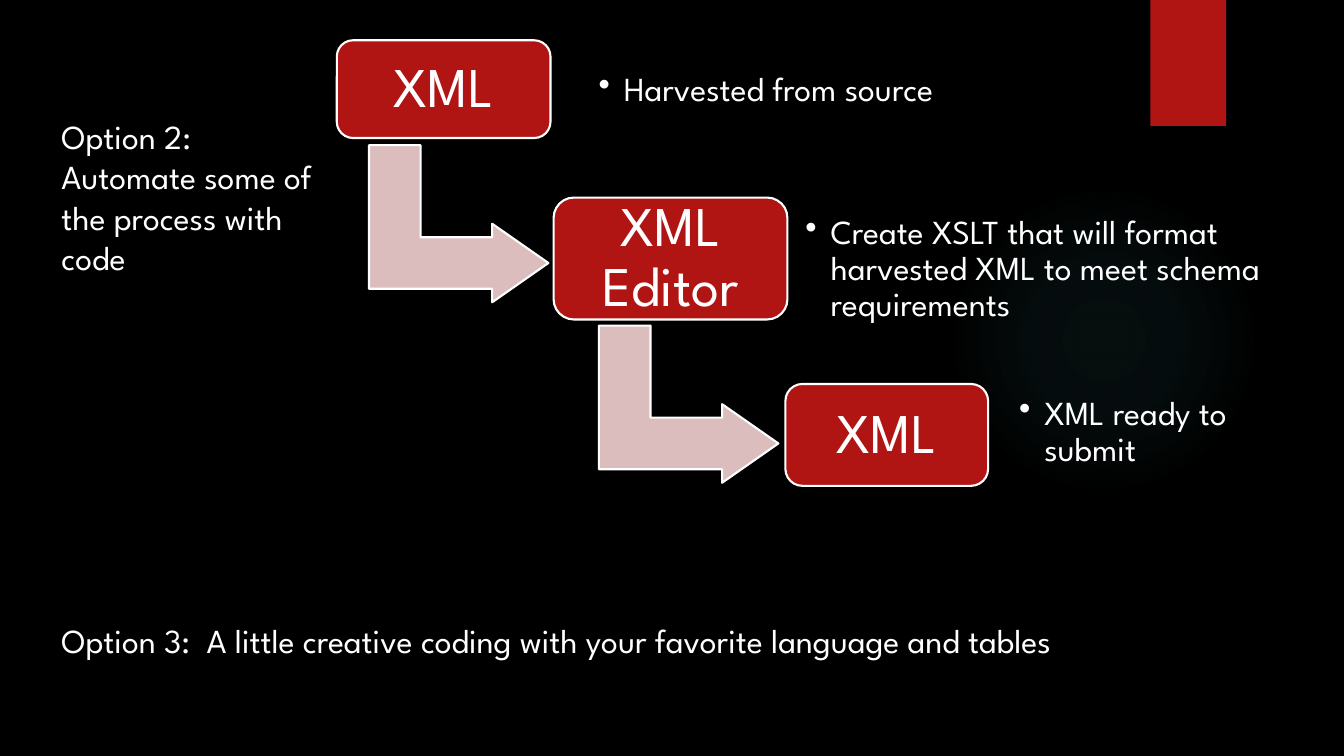
from dataclasses import dataclass

from lxml.etree import SubElement
from pptx import Presentation
from pptx.dml.color import RGBColor
from pptx.enum.shapes import MSO_SHAPE
from pptx.enum.text import MSO_ANCHOR, PP_ALIGN
from pptx.oxml import parse_xml
from pptx.oxml.ns import nsdecls, qn
from pptx.shapes.autoshape import Shape
from pptx.slide import Slide
from pptx.util import Emu, Inches, Pt

WIDTH, HEIGHT = Inches(13.33), Inches(7.5)
FONT = "League Spartan"
BLACK, WHITE, RED, PINK, TEAL = "000000", "FFFFFF", "B01513", "DCBDBD", "50B9C1"


@dataclass(frozen=True)
class Area:
    """Left, top, width and height as percentages of the slide."""
    left: float
    top: float
    width: float
    height: float

    def lengths(self) -> tuple[Emu, Emu, Emu, Emu]:
        return (
            Emu(round(WIDTH * self.left / 100)),
            Emu(round(HEIGHT * self.top / 100)),
            Emu(round(WIDTH * self.width / 100)),
            Emu(round(HEIGHT * self.height / 100)),
        )


@dataclass(frozen=True)
class Step:
    label: str
    box: Area
    note: str
    note_area: Area


@dataclass(frozen=True)
class Option:
    lines: tuple[str, ...]
    area: Area


GLOW = Area(70.59, 24.4, 23.1, 41.07)
TAB = Area(85.6, 0, 5.63, 16.67)
ARROWS = [Area(left, top, 11.7, 23.73) for left, top in ((28.28, 17.73), (45.39, 41.6))]
STEPS = [
    Step("XML", Area(25.06, 5.33, 15.9, 12.93),
         "Harvested from source", Area(43.81, 4.8, 29.71, 14.27)),
    Step("XML Editor", Area(41.19, 26.13, 17.4, 16.13),
         "Create XSLT that will format harvested XML to meet schema requirements",
         Area(59.19, 27.47, 38.26, 16.4)),
    Step("XML", Area(58.44, 50.8, 15.08, 13.47),
         "XML ready to submit", Area(75.09, 50.13, 20.71, 14.27)),
]
OPTIONS = [
    Option(("Option 2:", "Automate some of the process with code"),
           Area(3.83, 14.67, 22.06, 22.93)),
    Option(("Option 3:  A little creative coding with your favorite language and tables",),
           Area(3.83, 81.33, 90.17, 6.67)),
]


def color(value: str) -> RGBColor:
    return RGBColor.from_string(value)


def add_block(page: Slide, kind: MSO_SHAPE, area: Area, fill: str, line: str = "") -> Shape:
    block = page.shapes.add_shape(kind, *area.lengths())
    block.shadow.inherit = False
    block.fill.solid()
    block.fill.fore_color.rgb = color(fill)
    if line:
        block.line.color.rgb = color(line)
        block.line.width = Pt(1.5)
    else:
        block.line.fill.background()
    return block


def add_glow(page: Slide) -> None:
    glow = add_block(page, MSO_SHAPE.OVAL, GLOW, TEAL)
    stops = "".join(
        f'<a:gs pos="{place * 1000}"><a:srgbClr val="{TEAL}">'
        f'<a:alpha val="{alpha * 1000}"/></a:srgbClr></a:gs>'
        for place, alpha in ((0, 7), (36, 6), (69, 0))
    )
    gradient = parse_xml(
        f'<a:gradFill {nsdecls("a")} rotWithShape="1"><a:gsLst>{stops}</a:gsLst>'
        '<a:path path="circle"><a:fillToRect l="50000" t="50000" r="50000" b="50000"/>'
        "</a:path></a:gradFill>"
    )
    properties = glow.fill._xPr
    properties.replace(properties.find(qn("a:solidFill")), gradient)


def add_arrow(page: Slide, area: Area) -> None:
    arrow = add_block(page, MSO_SHAPE.BENT_UP_ARROW, area, PINK, WHITE)
    arrow.rotation = 90
    for index, share in enumerate((0.328, 0.25, 0.358)):
        arrow.adjustments[index] = share


def write(box: Shape, lines: tuple[str, ...], size: int, spacing: float = 1.0,
          align: PP_ALIGN = PP_ALIGN.LEFT, bullet: bool = False) -> None:
    frame = box.text_frame
    frame.word_wrap = True
    frame.text = "\n".join(lines)
    for para in frame.paragraphs:
        if bullet:
            properties = para._p.get_or_add_pPr()
            properties.set("marL", str(Inches(0.25)))
            properties.set("indent", str(-Inches(0.25)))
            SubElement(properties, qn("a:buChar")).set("char", "•")
        para.alignment = align
        para.line_spacing = spacing
        para.font.name = FONT
        para.font.size = Pt(size)
        para.font.color.rgb = color(WHITE)


def add_step(page: Slide, step: Step) -> None:
    box = add_block(page, MSO_SHAPE.ROUNDED_RECTANGLE, step.box, RED, WHITE)
    frame = box.text_frame
    frame.margin_left = frame.margin_right = Inches(0.2)
    frame.margin_top = frame.margin_bottom = 0
    frame.vertical_anchor = MSO_ANCHOR.MIDDLE
    write(box, (step.label,), 40, 0.9, PP_ALIGN.CENTER)

    note = page.shapes.add_textbox(*step.note_area.lengths())
    note.text_frame.margin_top = note.text_frame.margin_bottom = Inches(0.1)
    note.text_frame.vertical_anchor = MSO_ANCHOR.MIDDLE
    write(note, (step.note,), 24, 0.9, bullet=True)


def main() -> None:
    deck = Presentation()
    deck.slide_width, deck.slide_height = WIDTH, HEIGHT
    page = deck.slides.add_slide(deck.slide_layouts[6])
    page.background.fill.solid()
    page.background.fill.fore_color.rgb = color(BLACK)

    add_glow(page)
    add_block(page, MSO_SHAPE.RECTANGLE, TAB, RED)
    for area in ARROWS:
        add_arrow(page, area)
    for step in STEPS:
        add_step(page, step)
    for option in OPTIONS:
        write(page.shapes.add_textbox(*option.area.lengths()), option.lines, 24)

    deck.save("out.pptx")


if __name__ == "__main__":
    main()
